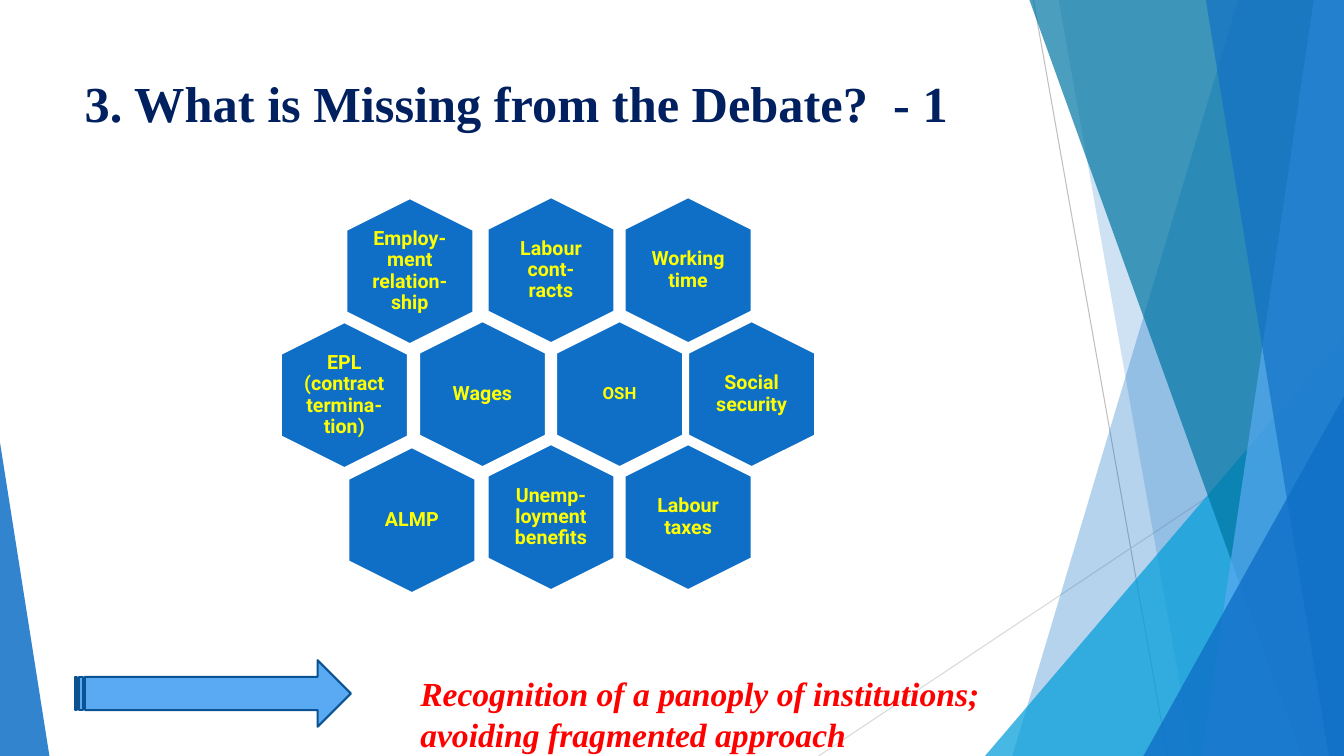
from lxml.etree import SubElement
from pptx import Presentation
from pptx.dml.color import RGBColor
from pptx.enum.shapes import MSO_CONNECTOR, MSO_SHAPE
from pptx.enum.text import MSO_ANCHOR, MSO_AUTO_SIZE, PP_ALIGN
from pptx.oxml.ns import qn
from pptx.util import Inches, Pt

COLORS = {
    "blue": "0F6FC6", "cyan": "009DD9", "teal": "0076A3", "sky": "59AAF2",
    "navy": "002060", "edge": "0B5292", "yellow": "FFFF00", "red": "FF0000",
    "white": "FFFFFF", "gray": "BFBFBF", "light_gray": "D9D9D9",
}


def fill_shape(shape, color, opacity=100):
    shape.shadow.inherit = False
    shape.fill.solid()
    shape.fill.fore_color.rgb = RGBColor.from_string(COLORS[color])
    if opacity < 100:
        color_element = shape.fill._xPr.find(qn("a:solidFill"))[0]
        SubElement(color_element, qn("a:alpha"), val=str(opacity * 1000))
    shape.line.fill.background()


def style_text(paragraph, font_name, size, color):
    paragraph.font.name = font_name
    paragraph.font.size = Pt(size)
    paragraph.font.bold = True
    paragraph.font.color.rgb = RGBColor.from_string(COLORS[color])


presentation = Presentation()
presentation.slide_width = Inches(13.33)
presentation.slide_height = Inches(7.5)
slide = presentation.slides.add_slide(presentation.slide_layouts[5])
shapes = slide.shapes

thin_lines = [
    (10.25, 0, 11.58, 7.5, "gray"),
    (13.33, 4.03, 8.12, 7.5, "light_gray"),
]
for *ends, color in thin_lines:
    connector = shapes.add_connector(MSO_CONNECTOR.STRAIGHT, *map(Inches, ends))
    connector.line.color.rgb = RGBColor.from_string(COLORS[color])
    connector.line.width = Pt(0.75)
    SubElement(connector._element.spPr, qn("a:effectLst"))

facets = [
    ("band", (12.28, 10.04), "blue", 30),
    ("band", (10.5, 11.83), "blue", 20),
    ("triangle", (9.77, 3.33, 3.56, 4.17, 1), "cyan", 72),
    ("band", (10.21, 12.91), "teal", 70),
    ("band", (13.03, 11.92), "sky", 70),
    ("band", (11.96, 13.18), "blue", 65),
    ("triangle", (11.34, 3.93, 1.99, 3.57, 1), "blue", 80),
    ("triangle", (0, 4.39, 0.49, 3.11, 0), "blue", 85),
]
for kind, geometry, color, opacity in facets:
    if kind == "band":
        top_left, bottom_left = geometry
        builder = shapes.build_freeform(Inches(top_left), 0)
        corners = [(13.33, 0), (13.33, 7.5), (bottom_left, 7.5)]
        builder.add_line_segments([(Inches(x), Inches(y)) for x, y in corners])
        facet = builder.convert_to_shape()
    else:
        *box, apex = geometry
        facet = shapes.add_shape(MSO_SHAPE.ISOSCELES_TRIANGLE, *map(Inches, box))
        facet.adjustments[0] = apex
    fill_shape(facet, color, opacity)

title = shapes.title
title.left, title.top, title.width, title.height = map(Inches, (0.74, 0.67, 9.4, 1.44))
title.text_frame.text = "3. What is Missing from the Debate?  - 1"
title.text_frame.vertical_anchor = MSO_ANCHOR.TOP
title.text_frame.auto_size = MSO_AUTO_SIZE.NONE
title_paragraph = title.text_frame.paragraphs[0]
title_paragraph.alignment = PP_ALIGN.LEFT
style_text(title_paragraph, "Times New Roman", 36, "navy")

institutions = [
    ("Social security", 6.73, 3.28, 14),
    ("Employ-ment relation-ship", 3.34, 2.06, 14),
    ("Labour cont-racts", 4.74, 2.05, 14),
    ("Working time", 6.1, 2.05, 14),
    ("OSH", 5.42, 3.28, 12),
    ("Wages", 4.06, 3.28, 14),
    ("Unemp-loyment benefits", 4.74, 4.5, 14),
    ("Labour taxes", 6.1, 4.5, 14),
    ("ALMP", 3.36, 4.53, 14),
    ("EPL (contract termina-tion)", 2.69, 3.29, 14),
]
for name, left, top, size in institutions:
    hexagon = shapes.add_shape(
        MSO_SHAPE.HEXAGON, Inches(left), Inches(top), Inches(1.45), Inches(1.26))
    hexagon.rotation = 90
    hexagon.adjustments[0] = 0.25
    fill_shape(hexagon, "blue")
    hexagon.line.color.rgb = RGBColor.from_string(COLORS["white"])
    hexagon.line.width = Pt(1.5)

    label = shapes.add_textbox(
        Inches(left + 0.29), Inches(top + 0.13), Inches(0.87), Inches(1))
    frame = label.text_frame
    frame.word_wrap = True
    frame.vertical_anchor = MSO_ANCHOR.MIDDLE
    frame.margin_left = frame.margin_right = frame.margin_top = frame.margin_bottom = 0
    frame.text = name
    paragraph = frame.paragraphs[0]
    paragraph.alignment = PP_ALIGN.CENTER
    paragraph.line_spacing = 0.9
    style_text(paragraph, "Roboto", size, "yellow")

arrow = shapes.add_shape(
    MSO_SHAPE.STRIPED_RIGHT_ARROW, Inches(0.74), Inches(6.55), Inches(2.74), Inches(0.66))
fill_shape(arrow, "sky")
arrow.line.color.rgb = RGBColor.from_string(COLORS["edge"])
arrow.line.width = Pt(1.5)

conclusion = shapes.add_textbox(Inches(4.07), Inches(6.63), Inches(6.07), Inches(0.91))
conclusion.text_frame.word_wrap = True
conclusion.text_frame.text = (
    "Recognition of a panoply of institutions; avoiding fragmented approach")
conclusion_paragraph = conclusion.text_frame.paragraphs[0]
style_text(conclusion_paragraph, "Times New Roman", 24, "red")
conclusion_paragraph.font.italic = True

presentation.save("out.pptx")
